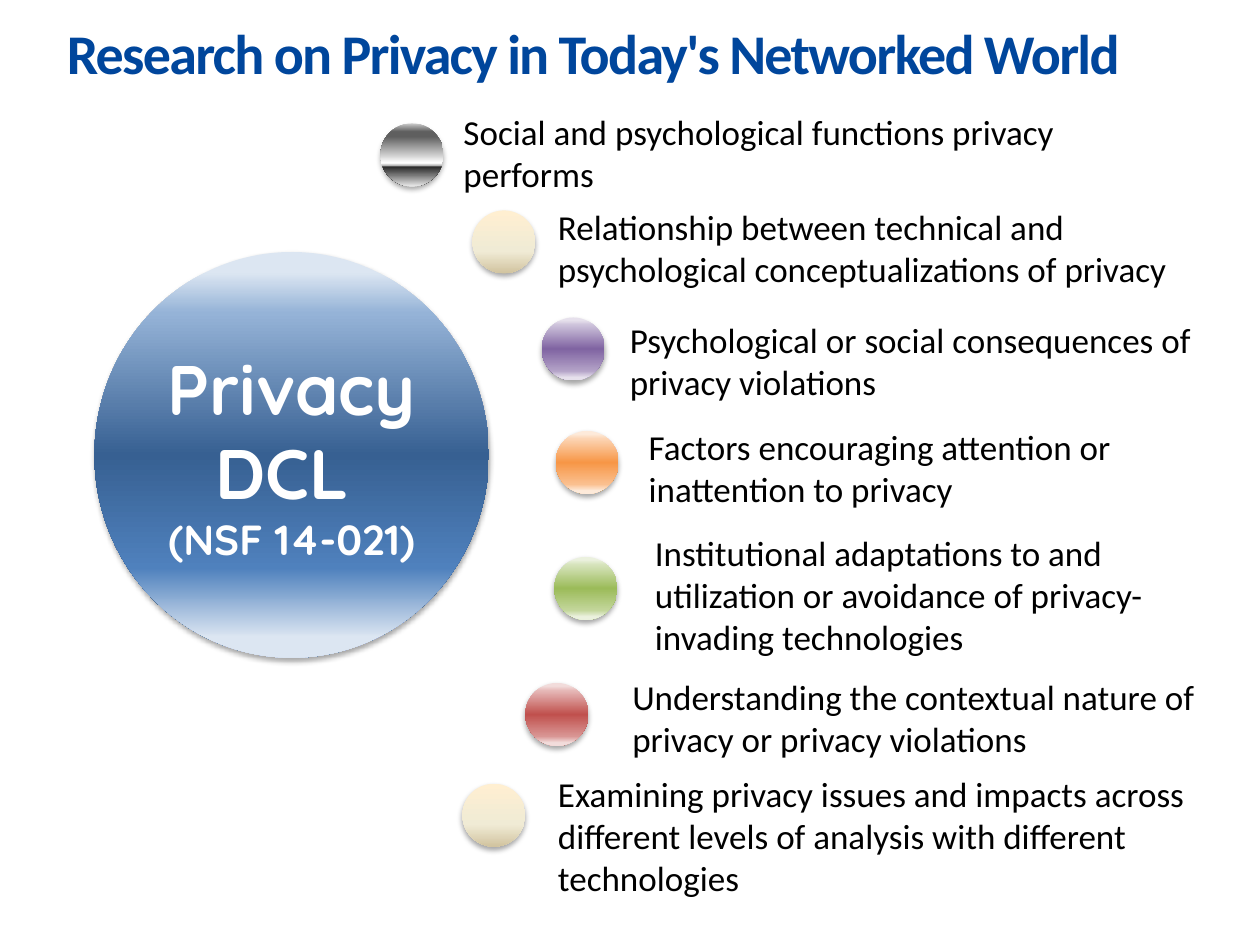
from lxml import etree
from pptx import Presentation
from pptx import util as u
from pptx.dml import color
from pptx.enum import shapes, text
from pptx.oxml import ns

HUES = {
    "title": "00469C", "body": "000000", "light": "FFFFFF", "shade": "000000",
}
BLENDS = {
    "blue": [(5, "DCE6F2"), (15, "95B3D7"), (50, "376092"), (78, "4F81BD"), (95, "DCE6F2")],
    "steel": [(0, "CBCBCB"), (13, "5F5F5F"), (21, "5F5F5F"), (63, "FFFFFF"),
              (67, "B2B2B2"), (69, "292929"), (82, "777777"), (100, "EAEAEA")],
    "sand": [(0, "FFEFD1"), (65, "F0EBD5"), (100, "D1C39F")],
}
BANDS = {
    "purple": ("E6E0EC", "CCC1DA", "8064A2", "B3A2C7"),
    "orange": ("FDEADA", "FCD5B5", "F79646", "FAC090"),
    "green": ("EBF1DE", "D7E4BD", "9BBB59", "C3D69B"),
    "red": ("F2DCDB", "E6B9B8", "C0504D", "D99694"),
}
for name, tones in BANDS.items():
    BLENDS[name] = list(zip((5, 12, 50, 85, 95), tones + tones[:1]))

COLS, ROWS = 10, 7.5
BALL = 0.5
TOPICS = [
    ("steel", (3.02, 0.98), (3.58, 0.83, 5.75, 0.77),
     "Social and psychological functions privacy performs"),
    ("sand", (3.75, 1.67), (4.33, 1.58, 5.5, 0.77),
     "Relationship between technical and psychological conceptualizations of privacy"),
    ("purple", (4.3, 2.52), (4.9, 2.48, 4.75, 0.77),
     "Psychological or social consequences of privacy violations"),
    ("orange", (4.41, 3.42), (5.05, 3.33, 4.61, 0.77),
     "Factors encouraging attention or inattention to privacy"),
    ("green", (4.4, 4.42), (5.1, 4.17, 4.73, 1.11),
     "Institutional adaptations to and utilization or avoidance of privacy-invading technologies"),
    ("red", (4.17, 5.42), (4.92, 5.31, 5, 0.77),
     "Understanding the contextual nature of privacy or privacy violations"),
    ("sand", (3.67, 6.22), (4.33, 6.08, 5.42, 1.11),
     "Examining privacy issues and impacts across different levels of analysis with different technologies"),
]


def node(root, tag, **attrs):
    return etree.SubElement(root, ns.qn(tag), {k: str(v) for k, v in attrs.items()})


class Deck:
    font, accent = "Calibri", "Quicksand"

    def __init__(self):
        self.prs = Presentation()
        self.prs.slide_width = u.Inches(10)
        self.prs.slide_height = u.Inches(7.5)
        self.page = self.prs.slides.add_slide(self.prs.slide_layouts[5])

    def place(self, x, y, w, h):
        col, row = self.prs.slide_width / COLS, self.prs.slide_height / ROWS
        return [round(v) for v in (x * col, y * row, w * col, h * row)]

    def say(self, para, words, size, hue, font=None, bold=False):
        run = para.add_run()
        run.text = words
        run.font.size = u.Pt(size)
        run.font.name = font or self.font
        run.font.bold = bold
        run.font.color.rgb = color.RGBColor.from_string(HUES[hue])
        return run

    def title(self, box, words):
        head = self.page.shapes.title
        head.left, head.top, head.width, head.height = self.place(*box)
        frame = head.text_frame
        frame.auto_size = text.MSO_AUTO_SIZE.NONE
        frame.vertical_anchor = text.MSO_ANCHOR.MIDDLE
        para = frame.paragraphs[0]
        para.alignment = text.PP_ALIGN.LEFT
        run = self.say(para, words, 32, "title", bold=True)
        run._r.get_or_add_rPr().set("spc", "-100")

    def label(self, box, words):
        frame = self.page.shapes.add_textbox(*self.place(*box)).text_frame
        frame.word_wrap = True
        frame.auto_size = text.MSO_AUTO_SIZE.SHAPE_TO_FIT_TEXT
        self.say(frame.paragraphs[0], words, 20, "body")

    def ball(self, box, blend, lines=()):
        ball = self.page.shapes.add_shape(shapes.MSO_SHAPE.OVAL, *self.place(*box))
        props = ball._element.spPr
        grad = node(props, "a:gradFill", rotWithShape=1)
        stops = node(grad, "a:gsLst")
        for pos, tone in BLENDS[blend]:
            node(node(stops, "a:gs", pos=pos * 1000), "a:srgbClr", val=tone)
        node(grad, "a:lin", ang=5400000, scaled=0)
        ball.line.fill.background()
        ball.shadow.inherit = False
        drop = node(props.find(ns.qn("a:effectLst")), "a:outerShdw", blurRad=u.Pt(3.1),
                    dist=u.Pt(1.8), dir=5400000, rotWithShape=0)
        node(node(drop, "a:srgbClr", val=HUES["shade"]), "a:alpha", val=35000)
        frame = ball.text_frame
        frame.vertical_anchor = text.MSO_ANCHOR.MIDDLE
        for i, (words, size) in enumerate(lines):
            para = frame.add_paragraph() if i else frame.paragraphs[0]
            para.alignment = text.PP_ALIGN.CENTER
            self.say(para, words, size, "light", self.accent, True)


def main():
    deck = Deck()
    deck.title((0.43, 0, 9.58, 0.83), "Research on Privacy in Today's Networked World")
    deck.ball((0.75, 2, 3.13, 3.22), "blue", [("Privacy DCL ", 40), ("(NSF 14-021)", 24)])
    for blend, spot, box, words in TOPICS:
        deck.ball((*spot, BALL, BALL), blend)
        deck.label(box, words)
    deck.prs.save("out.pptx")


if __name__ == "__main__":
    main()
